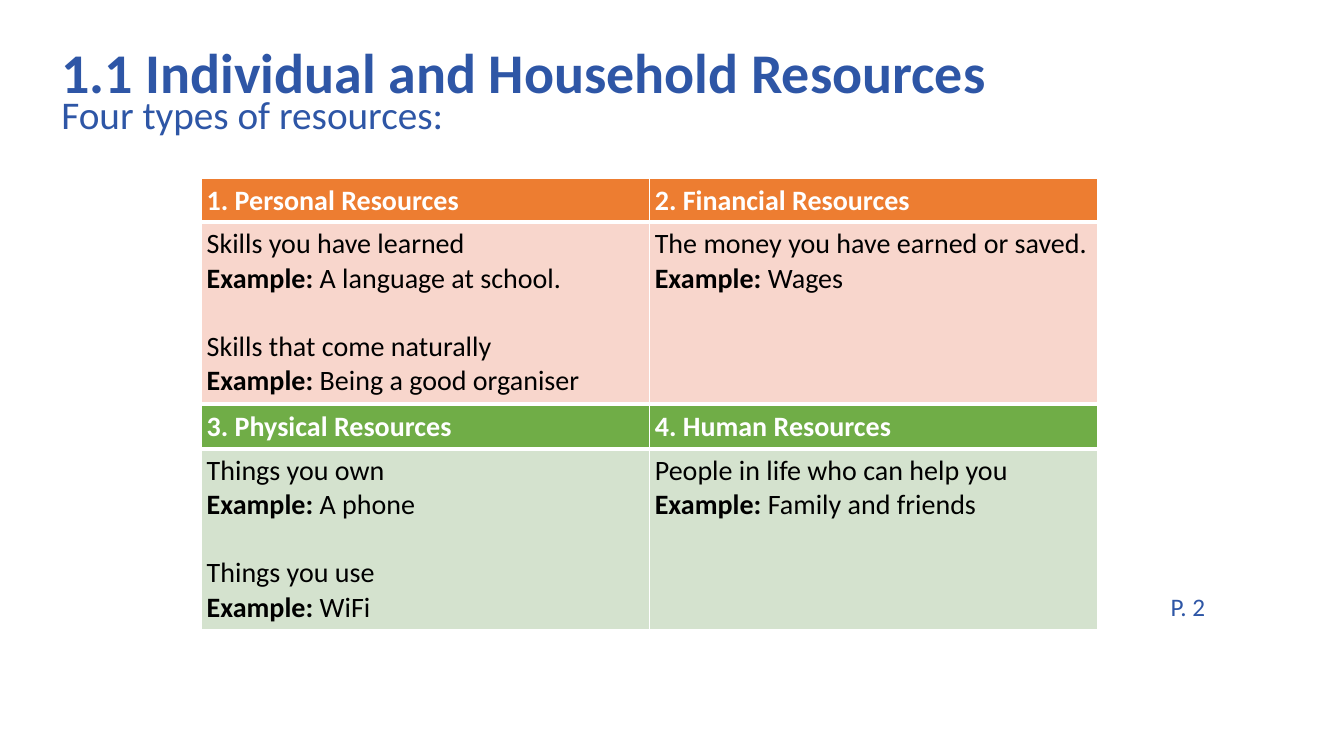
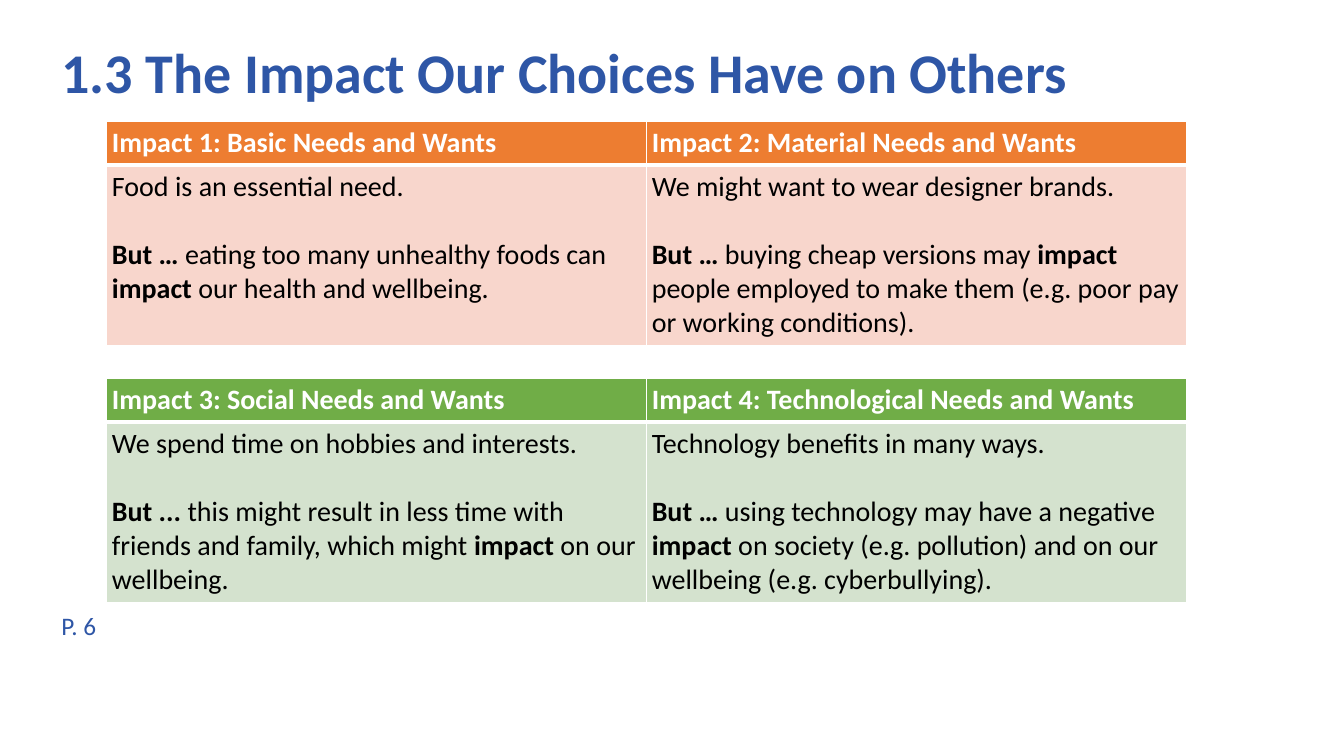
from lxml.etree import SubElement as Sub
from pptx import Presentation as Deck
from pptx.dml.color import RGBColor as Rgb
from pptx.enum.text import MSO_ANCHOR as Anchor, MSO_AUTO_SIZE as Auto, PP_ALIGN as Align
from pptx.oxml.ns import qn
from pptx.util import Inches, Pt

# Shared look
FONT = "Calibri"
HEX = {
    "blue": "2E56A6", "white": "FFFFFF", "black": "000000",
    "orange": "ED7D31", "pink": "F8D6CC",
    "green": "70AD47", "mint": "D4E2CE",
}
TONES = {"warm": ("orange", "pink"), "cool": ("green", "mint")}
PAD = Inches(0.05)
LEFT = 0.56
HEAD, BODY = 0.41, 1.79
GAP = Pt(24)


def rgb(name):
    return Rgb.from_string(HEX[name])


def add_run(para, text, size, color, bold=False):
    run = para.add_run()
    run.text = text
    font = run.font
    font.name, font.size, font.bold = FONT, Pt(size), bold
    font.color.rgb = rgb(color)


def set_frame(frame):
    frame.margin_left = frame.margin_right = PAD
    frame.margin_top = frame.margin_bottom = PAD
    frame.word_wrap = True
    frame.auto_size = Auto.SHAPE_TO_FIT_TEXT
    frame.vertical_anchor = Anchor.TOP


def add_label(slide, text, box, size):
    frame = slide.shapes.add_textbox(*map(Inches, box)).text_frame
    set_frame(frame)
    add_run(frame.paragraphs[0], text, size, "blue")


def add_page(deck, text):
    """Add a title-only slide with its heading."""
    slide = deck.slides.add_slide(deck.slide_layouts[5])
    title = slide.shapes.title
    title.left, title.top = Inches(LEFT), Inches(0.4)
    title.width, title.height = Inches(11.4), Inches(0.66)
    set_frame(title.text_frame)
    para = title.text_frame.paragraphs[0]
    para.alignment, para.line_spacing = Align.LEFT, 0.9
    add_run(para, text, 40, "blue", True)
    return slide


def set_edges(cell, top, bottom):
    """Draw white cell borders, with widths in points."""
    props = cell._tc.get_or_add_tcPr()
    widths = {"lnL": 1, "lnR": 1, "lnT": top, "lnB": bottom}
    for spot, (tag, width) in enumerate(widths.items()):
        line = Sub(props, qn("a:" + tag), w=str(Pt(width)))
        fill = Sub(line, qn("a:solidFill"))
        Sub(fill, qn("a:srgbClr"), val=HEX["white"])
        props.insert(spot, line)


def style_cell(cell, fill, top, bottom):
    cell.margin_left = cell.margin_right = PAD
    cell.margin_top = cell.margin_bottom = PAD
    cell.fill.solid()
    cell.fill.fore_color.rgb = rgb(fill)
    set_edges(cell, top, bottom)


def fill_body(frame, blocks):
    """Write blocks of lines; asterisks enclose bold words."""
    para = frame.paragraphs[0]
    for num, block in enumerate(blocks):
        for row, line in enumerate(block):
            if num or row:
                para = frame.add_paragraph()
            if num and not row:
                para.space_before = GAP
            for part, text in enumerate(line.split("*")):
                if text:
                    add_run(para, text, 20, "black", part % 2 == 1)


def add_grid(slide, left, top, width, tone, cards):
    """Add a table of (heading, blocks) cards, one per column."""
    box = map(Inches, (left, top, width, HEAD + BODY))
    table = slide.shapes.add_table(2, len(cards), *box).table
    table.horz_banding = False
    table.rows[0].height, table.rows[1].height = Inches(HEAD), Inches(BODY)
    dark, light = TONES[tone]
    for col, (head, blocks) in enumerate(cards):
        cell = table.cell(0, col)
        style_cell(cell, dark, 1, 3)
        add_run(cell.text_frame.paragraphs[0], head, 20, "white", True)
        cell = table.cell(1, col)
        style_cell(cell, light, 3, 1)
        fill_body(cell.text_frame, blocks)


def add_types(deck):
    slide = add_page(deck, "1.1 Individual and Household Resources")
    add_label(slide, "Four types of resources:", (LEFT, 0.85, 8.26, 0.49), 28)
    add_grid(slide, 2, 1.77, 8.89, "warm", [
        ("1. Personal Resources", [
            ["Skills you have learned", "*Example: *A language at school."],
            ["Skills that come naturally", "*Example: *Being a good organiser"]]),
        ("2. Financial Resources", [
            ["The money you have earned or saved.", "*Example: *Wages"]]),
    ])
    add_grid(slide, 2, 4.02, 8.89, "cool", [
        ("3. Physical Resources", [
            ["Things you own", "*Example: *A phone"],
            ["Things you use", "*Example: *WiFi"]]),
        ("4. Human Resources", [
            ["People in life who can help you", "*Example: *Family and friends"]]),
    ])
    add_label(slide, "P. 2", (11.56, 5.82, 1.24, 0.4), 18)


def add_impact(deck):
    slide = add_page(deck, "1.3 The Impact Our Choices Have on Others")
    add_grid(slide, 1.06, 1.2, 10.71, "warm", [
        ("Impact 1: Basic Needs and Wants", [
            ["Food is an essential need."],
            ["*But … *eating too many unhealthy foods can *impact* our health "
             "and wellbeing."]]),
        ("Impact 2: Material Needs and Wants", [
            ["We might want to wear designer brands."],
            ["*But … *buying cheap versions may *impact* people employed to "
             "make them (e.g. poor pay or working conditions)."]]),
    ])
    add_grid(slide, 1.06, 3.75, 10.71, "cool", [
        ("Impact 3: Social Needs and Wants", [
            ["We spend time on hobbies and interests."],
            ["*But ... *this might result in less time with friends and family, "
             "which might *impact* on our wellbeing."]]),
        ("Impact 4: Technological Needs and Wants", [
            ["Technology benefits in many ways."],
            ["*But … *using technology may have a negative *impact* on society "
             "(e.g. pollution) and on our wellbeing (e.g. cyberbullying)."]]),
    ])
    add_label(slide, "P. 6", (LEFT, 6.01, 6.57, 0.4), 18)


def main():
    deck = Deck()
    deck.slide_width, deck.slide_height = Inches(13.33), Inches(7.5)
    add_types(deck)
    add_impact(deck)
    deck.save("out.pptx")


if __name__ == "__main__":
    main()
